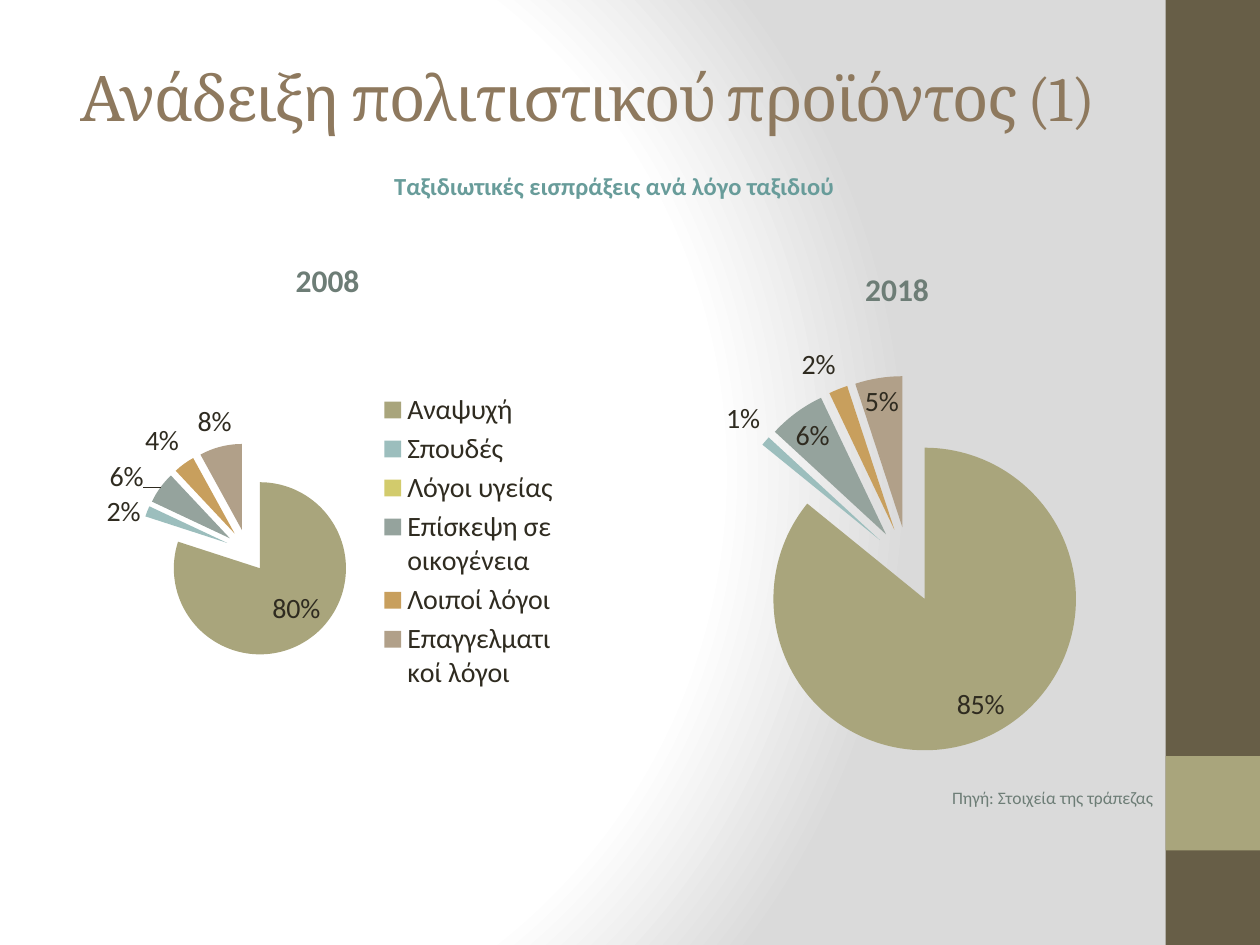
"""Build the slide on travel receipts by purpose of trip, 2008 against 2018."""
from dataclasses import dataclass
from typing import Optional

import pptx
import pptx.chart.data
import pptx.dml.color
import pptx.enum.chart
import pptx.enum.shapes
import pptx.enum.text
import pptx.oxml
import pptx.oxml.ns
import pptx.util
from pptx.util import Inches

COLORS = {
    "title": "8E795E", "subtitle": "689C9A", "muted": "6D7D76", "text": "2F2B20",
    "band": "675E47", "accent": "A9A57C", "light": "FFFFFF", "shade": "DADADA",
}
SLICE_COLORS = ["A9A57C", "9CBEBD", "D2CB6C", "95A39D", "C89F5D", "B1A089"]
PURPOSES = ["Αναψυχή", "Σπουδές", "Λόγοι υγείας", "Επίσκεψη σε οικογένεια",
            "Λοιποί λόγοι", "Επαγγελματικοί λόγοι"]
ALIGN = pptx.enum.text.PP_ALIGN


@dataclass
class Box:
    left: float
    top: float
    width: float
    height: float

    def inches(self) -> list:
        return [Inches(v) for v in (self.left, self.top, self.width, self.height)]


@dataclass
class Band:
    box: Box
    color: str


@dataclass
class YearPie:
    year: str
    box: Box
    plot: Box
    categories: list
    shares: list
    legend: Optional[Box] = None


BANDS = [
    Band(Box(9.25, 0, 0.75, 7.5), COLORS["band"]),
    Band(Box(9.25, 6, 0.75, 0.75), COLORS["accent"]),
]
PIES = [
    YearPie("2008", Box(0.67, 1.86, 3.86, 4.88), Box(0.11, 0.34, 0.45, 0.35),
            PURPOSES, [80, 2, 0, 6, 4, 8], Box(0.61, 0.25, 0.36, 0.5)),
    YearPie("2018", Box(5.31, 1.94, 3.62, 4.17), Box(0.11, 0.25, 0.83, 0.72),
            list("123456"), [85, 1, 0, 6, 2, 5]),
]


def xml(tag: str, content: str = "", attributes: str = ""):
    prefix = tag.split(":")[0]
    namespaces = pptx.oxml.ns.nsdecls(*{prefix, "a"})
    return pptx.oxml.parse_xml(f"<{tag} {namespaces} {attributes}>{content}</{tag}>")


def style_font(font, size: float, color: str, bold: bool = False, name: str = "Calibri") -> None:
    font.size, font.bold, font.name = pptx.util.Pt(size), bold, name
    font.color.rgb = pptx.dml.color.RGBColor.from_string(color)


def write(paragraph, text: str, *, size: float, color: str, bold: bool = False,
          name: str = "Calibri", align=None, before: float = 0, spacing: int = 0) -> None:
    paragraph.alignment = align
    paragraph.space_before = pptx.util.Pt(before)
    run = paragraph.add_run()
    run.text = text
    style_font(run.font, size, color, bold, name)
    if spacing:
        run.font._element.set("spc", str(spacing))


def move(shape, box: Box) -> None:
    shape.left, shape.top, shape.width, shape.height = box.inches()


def paint_background(slide) -> None:
    slide.background.fill.solid()
    stops = [(0, "light"), (75, "light"), (100, "shade")]
    stop_list = "".join(
        f'<a:gs pos="{position * 1000}"><a:srgbClr val="{COLORS[name]}"/></a:gs>'
        for position, name in stops)
    gradient = xml("a:gradFill", f'<a:gsLst>{stop_list}</a:gsLst><a:path path="circle">'
                   '<a:fillToRect l="20000" t="50000" r="100000" b="50000"/></a:path>',
                   'rotWithShape="1"')
    properties = slide.element.find(".//" + pptx.oxml.ns.qn("p:bgPr"))
    properties.replace(properties[0], gradient)


def draw_band(slide, band: Band) -> None:
    bar = slide.shapes.add_shape(pptx.enum.shapes.MSO_SHAPE.RECTANGLE, *band.box.inches())
    bar.shadow.inherit = False
    bar.fill.solid()
    bar.fill.fore_color.rgb = pptx.dml.color.RGBColor.from_string(band.color)
    bar.line.fill.background()


def set_layout(element, index: int, box: Box, target: str = "") -> None:
    for previous in element.findall(pptx.oxml.ns.qn("c:layout")):
        element.remove(previous)
    modes = '<c:xMode val="edge"/><c:yMode val="edge"/>'
    edges = (f'<c:x val="{box.left}"/><c:y val="{box.top}"/>'
             f'<c:w val="{box.width}"/><c:h val="{box.height}"/>')
    element.insert(index, xml(
        "c:layout", f"<c:manualLayout>{target}{modes}{edges}</c:manualLayout>"))


def draw_pie(slide, pie: YearPie) -> None:
    data = pptx.chart.data.CategoryChartData(number_format="#,##0.0")
    data.categories = pie.categories
    data.add_series(pie.year, pie.shares)
    chart = slide.shapes.add_chart(
        pptx.enum.chart.XL_CHART_TYPE.PIE, *pie.box.inches(), data).chart
    style_font(chart.font, 10, COLORS["text"])
    chart.has_title = True
    write(chart.chart_title.text_frame.paragraphs[0], pie.year,
          size=18, color=COLORS["muted"], bold=True)

    plot = chart.plots[0]
    plot.vary_by_categories = True
    series = plot.series[0]
    series_name = series._element.find(pptx.oxml.ns.qn("c:tx"))
    series_name.addnext(xml("c:explosion", attributes='val="25"'))
    for index, color in enumerate(SLICE_COLORS):
        fill = series.points[index].format.fill
        fill.solid()
        fill.fore_color.rgb = pptx.dml.color.RGBColor.from_string(color)

    labels = series.data_labels
    labels.show_percentage, labels.show_value = False, True
    labels.number_format, labels.number_format_is_linked = '0"%"', False
    labels.position = pptx.enum.chart.XL_LABEL_POSITION.BEST_FIT
    style_font(labels.font, 16, COLORS["text"])

    plot_area = chart.element.find(".//" + pptx.oxml.ns.qn("c:plotArea"))
    set_layout(plot_area, 0, pie.plot, '<c:layoutTarget val="inner"/>')
    chart.has_legend = pie.legend is not None
    if pie.legend:
        chart.legend.position = pptx.enum.chart.XL_LEGEND_POSITION.RIGHT
        chart.legend.include_in_layout = False
        style_font(chart.legend.font, 16, COLORS["text"])
        set_layout(chart.legend._element, 1, pie.legend)


def fill_placeholders(slide) -> None:
    title, body = slide.shapes.title, slide.placeholders[1]
    move(title, Box(0.5, 0.3, 8.33, 0.93))
    title.text_frame.vertical_anchor = pptx.enum.text.MSO_ANCHOR.MIDDLE
    write(title.text_frame.paragraphs[0], "Ανάδειξη πολιτιστικού προϊόντος (1)", size=36,
          color=COLORS["title"], name="Cambria", align=ALIGN.CENTER, spacing=-100)

    move(body, Box(0.5, 1.31, 8.75, 5.34))
    frame = body.text_frame
    frame.auto_size = pptx.enum.text.MSO_AUTO_SIZE.NONE
    write(frame.paragraphs[0], "Ταξιδιωτικές εισπράξεις ανά λόγο ταξιδιού", size=14,
          color=COLORS["subtitle"], bold=True, align=ALIGN.CENTER)
    write(frame.add_paragraph(), "Πηγή: Στοιχεία της τράπεζας", size=10,
          color=COLORS["muted"], align=ALIGN.RIGHT, before=335)
    for paragraph in frame.paragraphs:
        properties = paragraph._p.get_or_add_pPr()
        properties.set("marL", "0")
        properties.set("indent", "0")
        properties.append(xml("a:buNone"))


def main() -> None:
    deck = pptx.Presentation()
    deck.slide_width, deck.slide_height = Inches(10), Inches(7.5)
    slide = deck.slides.add_slide(deck.slide_layouts[1])
    paint_background(slide)
    for band in BANDS:
        draw_band(slide, band)
    fill_placeholders(slide)
    for pie in PIES:
        draw_pie(slide, pie)
    deck.save("out.pptx")


if __name__ == "__main__":
    main()
